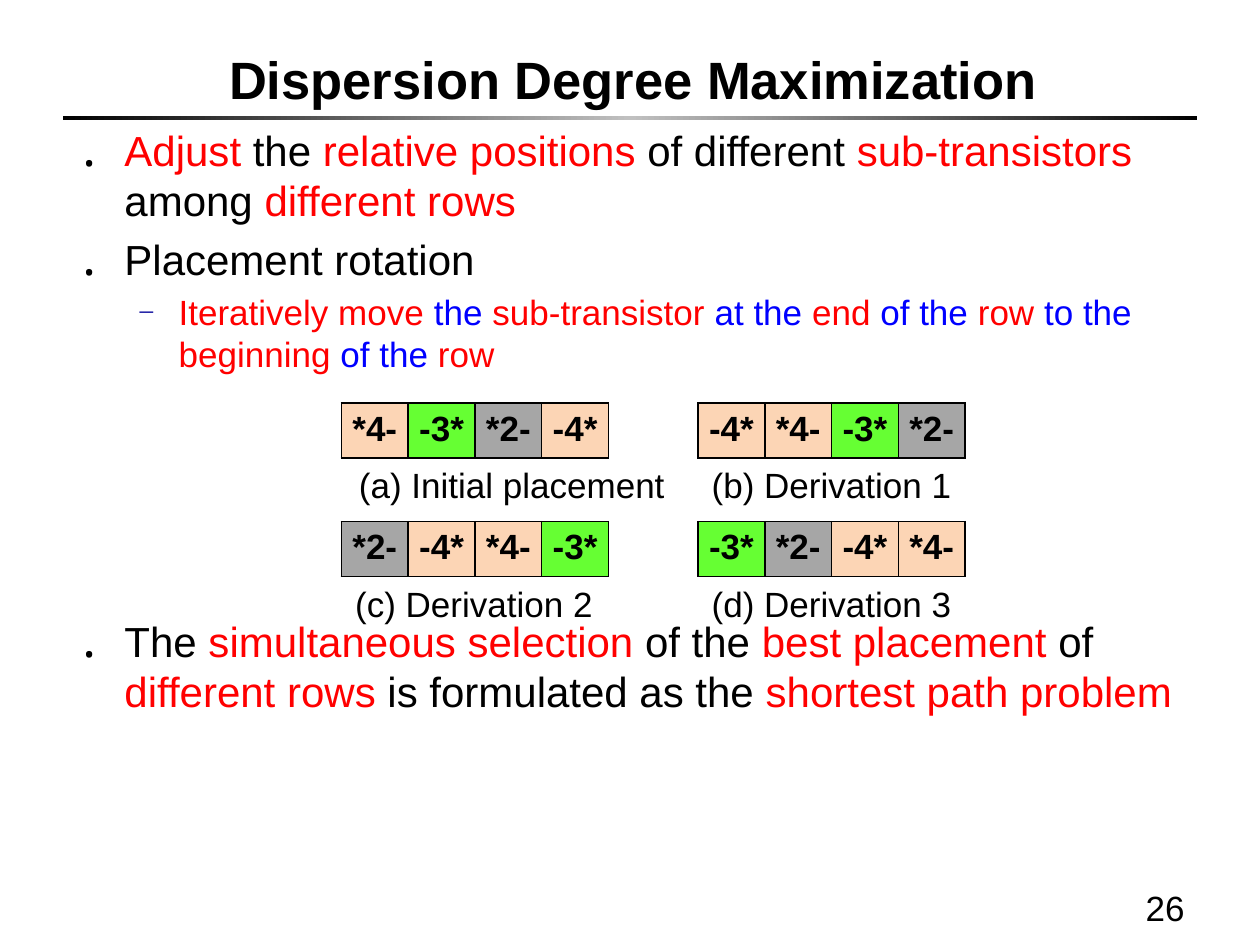
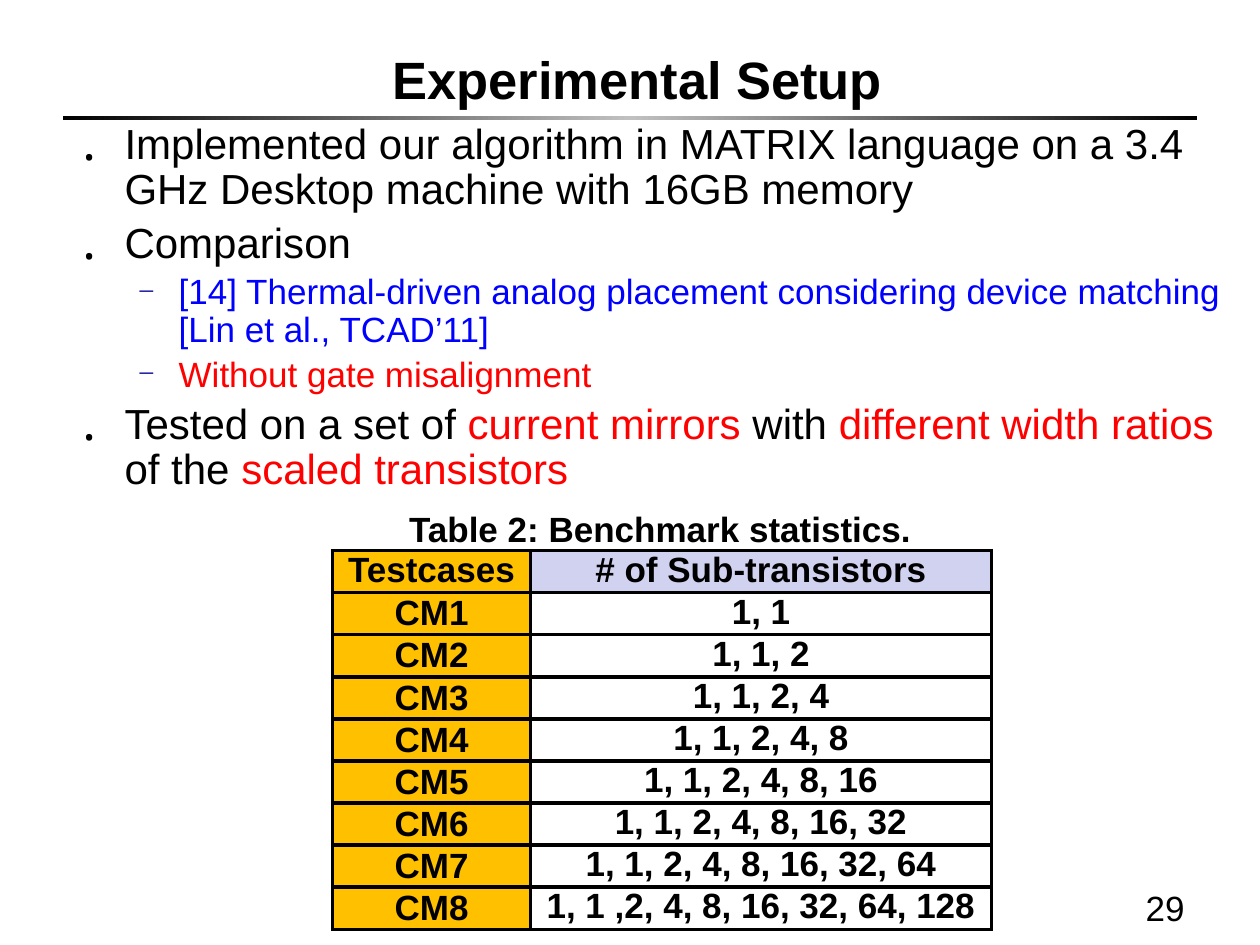
from copy import deepcopy
from dataclasses import dataclass
from pptx import Presentation
from pptx.dml.color import RGBColor
from pptx.enum import shapes, text
from pptx.oxml import parse_xml
from pptx.oxml.ns import nsdecls
from pptx.util import Inches, Pt


@dataclass(frozen=True)
class Theme:
    font: str = "Arial"
    ink: str = "000000"
    red: str = "FF0000"
    blue: str = "0000FF"
    navy: str = "000099"
    white: str = "FFFFFF"
    silver: str = "C0C0C0"
    peach: str = "FCD5B5"
    green: str = "66FF33"
    gray: str = "A6A6A6"
    gold: str = "FFC000"
    lilac: str = "D1D1F0"
    head: int = 30
    main: int = 24
    small: int = 20


T = Theme()
LEFT, MID, RIGHT = text.PP_ALIGN.LEFT, text.PP_ALIGN.CENTER, text.PP_ALIGN.RIGHT
TOP, CORE, BASE = text.MSO_ANCHOR.TOP, text.MSO_ANCHOR.MIDDLE, text.MSO_ANCHOR.BOTTOM
TONES = {"*4-": T.peach, "-4*": T.peach, "-3*": T.green, "*2-": T.gray}
START = ["*4-", "-3*", "*2-", "-4*"]


def write(para, words, size=T.small, color=T.ink, accent=T.red, bold=False, align=LEFT):
    para.alignment = align
    for i, part in enumerate(words.split("|")):
        if part:
            run = para.add_run()
            run.text = part
            font = run.font
            font.name, font.size, font.bold = T.font, Pt(size), bold
            font.color.rgb = RGBColor.from_string(accent if i % 2 else color)


def place(shape, box):
    shape.left, shape.top, shape.width, shape.height = map(Inches, box)


def label(slide, box, words, anchor=TOP, **look):
    frame = slide.shapes.add_textbox(*map(Inches, box)).text_frame
    frame.word_wrap = True
    frame.vertical_anchor = anchor
    write(frame.paragraphs[0], words, **look)


def indent(para, left, first=0):
    props = para._p.get_or_add_pPr()
    props.set("marL", str(Inches(left)))
    props.set("indent", str(Inches(first)))
    return props


def mark(para, sign, color, scale, left, first):
    props = indent(para, left, first)
    for xml in (
        f'<a:buClr {nsdecls("a")}><a:srgbClr val="{color}"/></a:buClr>',
        f'<a:buSzPct {nsdecls("a")} val="{scale * 1000}"/>',
        f'<a:buFont {nsdecls("a")} typeface="{T.font}"/>',
        f'<a:buChar {nsdecls("a")} char="{sign}"/>',
    ):
        props.append(parse_xml(xml))


def rule(slide, box):
    bar = slide.shapes.add_shape(shapes.MSO_SHAPE.RECTANGLE, *map(Inches, box))
    bar.shadow.inherit = False
    bar.line.fill.background()
    bar.fill.gradient()
    bar.fill.gradient_angle = 0
    stops = bar.fill.gradient_stops
    first = stops[0]._gs
    first.addnext(deepcopy(first))
    for stop, spot, color in zip(bar.fill.gradient_stops, (0, 0.5, 1), (T.ink, T.silver, T.ink)):
        stop.position = spot
        stop.color.rgb = RGBColor.from_string(color)


def frame_slide(deck, title, number, box):
    slide = deck.slides.add_slide(deck.slide_layouts[5])
    rule(slide, (0.5, 0.92, 9, 0.03))
    head = slide.shapes.title
    place(head, box)
    head.text_frame.vertical_anchor = BASE
    head.text_frame.word_wrap = True
    para = head.text_frame.paragraphs[0]
    write(para, title, size=T.head, bold=True, align=MID)
    indent(para, 0.12)
    label(slide, (7.42, 6.92, 2.08, 0.5), number, anchor=BASE, align=RIGHT)
    return slide


def points(slide, box, items, lead):
    frame = slide.shapes.add_textbox(*map(Inches, box)).text_frame
    frame.word_wrap = True
    for i, (level, words, gap) in enumerate(items):
        para = frame.add_paragraph() if i else frame.paragraphs[0]
        size = T.small if level else T.main
        para.level = level
        para.line_spacing = Pt(round(size * lead, 1))
        para.space_before = Pt(gap or round(size * 0.21, 1)) if i else Pt(0)
        if level:
            mark(para, "─", T.navy, 55, 0.81, -0.31)
        else:
            mark(para, "․", T.ink, 120, 0.38, -0.38)
        write(para, words, size=size, color=T.blue if level else T.ink)


def edge(cell, width):
    props = cell._tc.get_or_add_tcPr()
    for i, side in enumerate(("lnL", "lnR", "lnT", "lnB")):
        props.insert(i, parse_xml(
            f'<a:{side} {nsdecls("a")} w="{Pt(width)}"><a:solidFill>'
            f'<a:srgbClr val="{T.ink}"/></a:solidFill></a:{side}>'))


def grid(slide, spot, cols, rows, data, tone, line, pad, anchor):
    box = (*spot, sum(cols), sum(rows))
    table = slide.shapes.add_table(len(rows), len(cols), *map(Inches, box)).table
    table.first_row = table.horz_banding = False
    for col, width in zip(table.columns, cols):
        col.width = Inches(width)
    for r, (row, high) in enumerate(zip(data, rows)):
        table.rows[r].height = Inches(high)
        for c, words in enumerate(row):
            cell = table.cell(r, c)
            cell.margin_left = cell.margin_right = Inches(0.05)
            cell.margin_top = cell.margin_bottom = Inches(pad)
            cell.vertical_anchor = anchor(r, c)
            cell.fill.solid()
            cell.fill.fore_color.rgb = RGBColor.from_string(tone(r, c, words))
            edge(cell, line)
            write(cell.text_frame.paragraphs[0], words, bold=True, align=MID)


def turns(slide, left, top):
    names = ("(a) Initial placement", "(b) Derivation 1", "(c) Derivation 2", "(d) Derivation 3")
    for i, name in enumerate(names):
        x, y = left + i % 2 * 2.83, top + i // 2 * 0.94
        cells = START[-i:] + START[:-i] if i else START
        grid(slide, (x, y), [0.53] * 4, [0.43], [cells],
             lambda r, c, words: TONES[words], 1, 0.05, lambda r, c: TOP)
        label(slide, (x + (0.01 if i else 0.04), y + 0.43, 2.75, 0.44), name)


def bench(slide, left, top):
    label(slide, (left, top, 5.2, 0.44), "Table 2: Benchmark statistics.", bold=True, align=MID)
    sizes = ["1, 1"] + ["1, 1, " + ", ".join(str(2 ** k) for k in range(1, n)) for n in range(2, 8)]
    sizes.append("1, 1 ,2, 4, 8, 16, 32, 64, 128")
    data = [("Testcases", "# of Sub-transistors")]
    data += [(f"CM{i}", words) for i, words in enumerate(sizes, 1)]
    rows = [0.33 if i in (5, 6) else 0.31 for i in range(len(data))]

    def tone(r, c, words):
        return T.gold if c == 0 else T.white if r else T.lilac

    grid(slide, (left, top + 0.39), (1.57, 3.66), rows, data, tone, 2.25, 0,
         lambda r, c: CORE if r and c == 0 else TOP)


def spread(deck):
    slide = frame_slide(deck, "Dispersion Degree Maximization", "26", (0.28, 0, 9.37, 0.92))
    points(slide, (0.51, 0.94, 9.06, 5.33), [
        (0, "|Adjust |the |relative positions |of different |sub-transistors| among |different rows", 0),
        (0, "Placement rotation", 0),
        (1, "|Iteratively move |the |sub-transistor |at the |end |of the |row |to the "
            "|beginning |of the |row", 0),
        (0, "The |simultaneous selection |of the |best placement |of |different rows "
            "|is formulated as the |shortest path problem", 138),
    ], 1.19)
    turns(slide, 2.71, 3.2)


def setup(deck):
    slide = frame_slide(deck, "Experimental Setup", "29", (0.75, 0, 8.5, 0.92))
    points(slide, (0.51, 0.93, 9.49, 2.98), [
        (0, "Implemented our algorithm in MATRIX language on a 3.4 GHz Desktop machine "
            "with 16GB memory", 0),
        (0, "Comparison", 0),
        (1, "[14] Thermal-driven analog placement considering device matching "
            "[Lin et al., TCAD’11]", 0),
        (1, "|Without gate misalignment", 0),
        (0, "Tested on a set of |current mirrors |with |different width ratios| of the "
            "|scaled transistors", 0),
    ], 1.07)
    bench(slide, 2.64, 3.98)


def main():
    deck = Presentation()
    deck.slide_width, deck.slide_height = Inches(10), Inches(7.5)
    spread(deck)
    setup(deck)
    deck.save("out.pptx")


if __name__ == "__main__":
    main()
